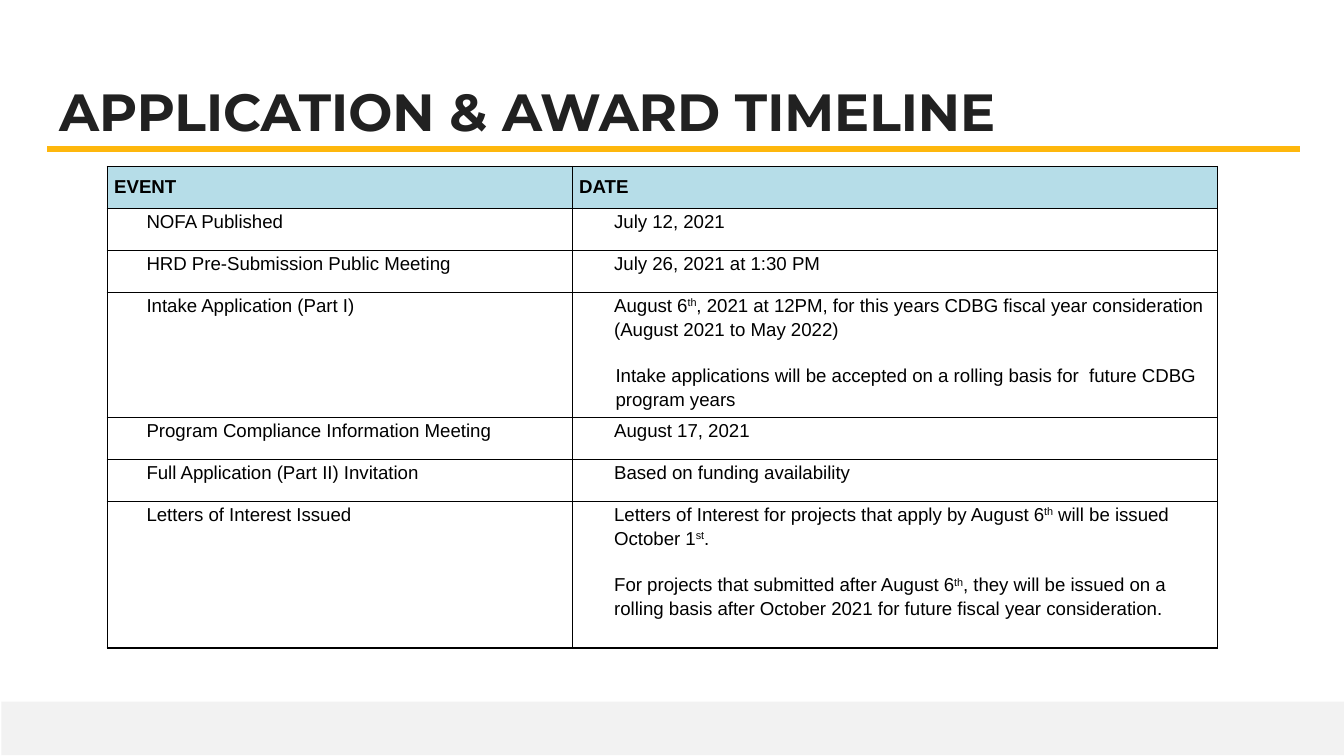
from dataclasses import dataclass

from lxml.etree import SubElement
from pptx import Presentation
from pptx.dml.color import RGBColor
from pptx.enum.shapes import MSO_CONNECTOR, MSO_SHAPE
from pptx.enum.text import MSO_ANCHOR, PP_ALIGN
from pptx.oxml.ns import qn
from pptx.slide import Slide
from pptx.table import _Cell
from pptx.util import Inches, Pt

INK = RGBColor(0x21, 0x21, 0x21)
BLACK = RGBColor(0, 0, 0)
GOLD = RGBColor(0xFE, 0xB7, 0x0D)
PALE_BLUE = RGBColor(0xB6, 0xDD, 0xE8)
PALE_GREY = RGBColor(0xF2, 0xF2, 0xF2)

SUPERSCRIPT_MARK = "^"
COLUMN_WIDTHS = (3.46, 4.8)
ROW_HEIGHT = 5 / 16
EVENT_INDENT = 0.29
DATE_INDENT = 0.31


@dataclass(frozen=True)
class Milestone:
    event: str
    dates: tuple[str, ...]
    height: float = ROW_HEIGHT
    second_indent: float = DATE_INDENT


MILESTONES = (
    Milestone("NOFA Published", ("July 12, 2021",)),
    Milestone("HRD Pre-Submission Public Meeting", ("July 26, 2021 at 1:30 PM",)),
    Milestone(
        "Intake Application (Part I)",
        (
            "August 6^th^, 2021 at 12PM, for this years CDBG fiscal year consideration "
            "(August 2021 to May 2022)",
            "Intake applications will be accepted on a rolling basis for  future CDBG program years",
        ),
        height=0.93,
        second_indent=0.32,
    ),
    Milestone("Program Compliance Information Meeting", ("August 17, 2021",)),
    Milestone("Full Application (Part II) Invitation", ("Based on funding availability",)),
    Milestone(
        "Letters of Interest Issued",
        (
            "Letters of Interest for projects that apply by August 6^th^ will be issued October 1^st^.",
            "For projects that submitted after August 6^th^, they will be issued on a rolling basis "
            "after October 2021 for future fiscal year consideration.",
        ),
        height=1.09,
    ),
)


def write_text(para, text: str, *, size: float = 10, font: str = "Arial",
               color: RGBColor = BLACK, bold: bool = False, indent: float = 0,
               line_spacing: float = 1.15, space_before: float = 0) -> None:
    para.alignment = PP_ALIGN.LEFT
    para.line_spacing = line_spacing
    para.space_before = Pt(space_before)
    properties = para._p.get_or_add_pPr()
    properties.set("marL", str(Inches(indent)))
    properties.set("indent", "0")
    for position, piece in enumerate(text.split(SUPERSCRIPT_MARK)):
        span = para.add_run()
        span.text = piece
        span.font.size = Pt(size)
        span.font.name = font
        span.font.bold = bold
        span.font.color.rgb = color
        if position % 2:
            span._r.get_or_add_rPr().set("baseline", "30000")


def set_margins(box, inset: float) -> None:
    box.margin_left = box.margin_right = Inches(inset)
    box.margin_top = box.margin_bottom = Inches(inset)


def style_cell(cell: _Cell, inset: float, fill: RGBColor | None = None) -> None:
    set_margins(cell, inset)
    cell.vertical_anchor = MSO_ANCHOR.TOP
    properties = cell._tc.get_or_add_tcPr()
    for side in ("a:lnL", "a:lnR", "a:lnT", "a:lnB"):
        border = SubElement(properties, qn(side), w=str(Pt(1)))
        border_fill = SubElement(border, qn("a:solidFill"))
        SubElement(border_fill, qn("a:srgbClr"), val=str(BLACK))
    if fill is None:
        cell.fill.background()
    else:
        cell.fill.solid()
        cell.fill.fore_color.rgb = fill


def add_footer_band(page: Slide) -> None:
    band = page.shapes.add_shape(
        MSO_SHAPE.RECTANGLE, Inches(0.01), Inches(5.22), Inches(9.99), Inches(0.4))
    band.shadow.inherit = False
    band.fill.solid()
    band.fill.fore_color.rgb = PALE_GREY
    band.line.fill.background()


def add_title_rule(page: Slide) -> None:
    rule = page.shapes.add_connector(
        MSO_CONNECTOR.STRAIGHT, Inches(0.35), Inches(1.11), Inches(9.67), Inches(1.11))
    rule.line.color.rgb = GOLD
    rule.line.width = Pt(3)
    SubElement(rule._element.spPr, qn("a:effectLst"))


def format_title(page: Slide, text: str) -> None:
    title = page.shapes.title
    title.left, title.top = Inches(0.34), Inches(0.49)
    title.width, title.height = Inches(9.32), Inches(0.63)
    frame = title.text_frame
    set_margins(frame, 0.1)
    frame.word_wrap = True
    frame.vertical_anchor = MSO_ANCHOR.TOP
    write_text(frame.paragraphs[0], text, size=28, font="Montserrat",
               color=INK, bold=True, line_spacing=1)


def add_timeline(page: Slide) -> None:
    heights = (ROW_HEIGHT, *(milestone.height for milestone in MILESTONES))
    table = page.shapes.add_table(
        len(heights), len(COLUMN_WIDTHS), Inches(0.8), Inches(1.24),
        Inches(sum(COLUMN_WIDTHS)), Inches(sum(heights))).table
    table.first_row = table.horz_banding = False
    for column, width in zip(table.columns, COLUMN_WIDTHS):
        column.width = Inches(width)
    for row, height in zip(table.rows, heights):
        row.height = Inches(height)
    for column, heading in enumerate(("EVENT", "DATE")):
        cell = table.cell(0, column)
        style_cell(cell, 0.05, PALE_BLUE)
        write_text(cell.text_frame.paragraphs[0], heading, bold=True)
    for row, milestone in enumerate(MILESTONES, start=1):
        event_cell, date_cell = table.cell(row, 0), table.cell(row, 1)
        style_cell(event_cell, 0)
        style_cell(date_cell, 0)
        write_text(event_cell.text_frame.paragraphs[0], milestone.event, indent=EVENT_INDENT)
        frame = date_cell.text_frame
        write_text(frame.paragraphs[0], milestone.dates[0], indent=DATE_INDENT)
        for date in milestone.dates[1:]:
            write_text(frame.add_paragraph(), date,
                       indent=milestone.second_indent, space_before=12)


def main() -> None:
    deck = Presentation()
    deck.slide_width = Inches(10)
    deck.slide_height = deck.slide_width * 9 // 16
    page = deck.slides.add_slide(deck.slide_layouts[5])
    add_footer_band(page)
    add_title_rule(page)
    format_title(page, "APPLICATION & AWARD TIMELINE")
    add_timeline(page)
    deck.save("out.pptx")


if __name__ == "__main__":
    main()
